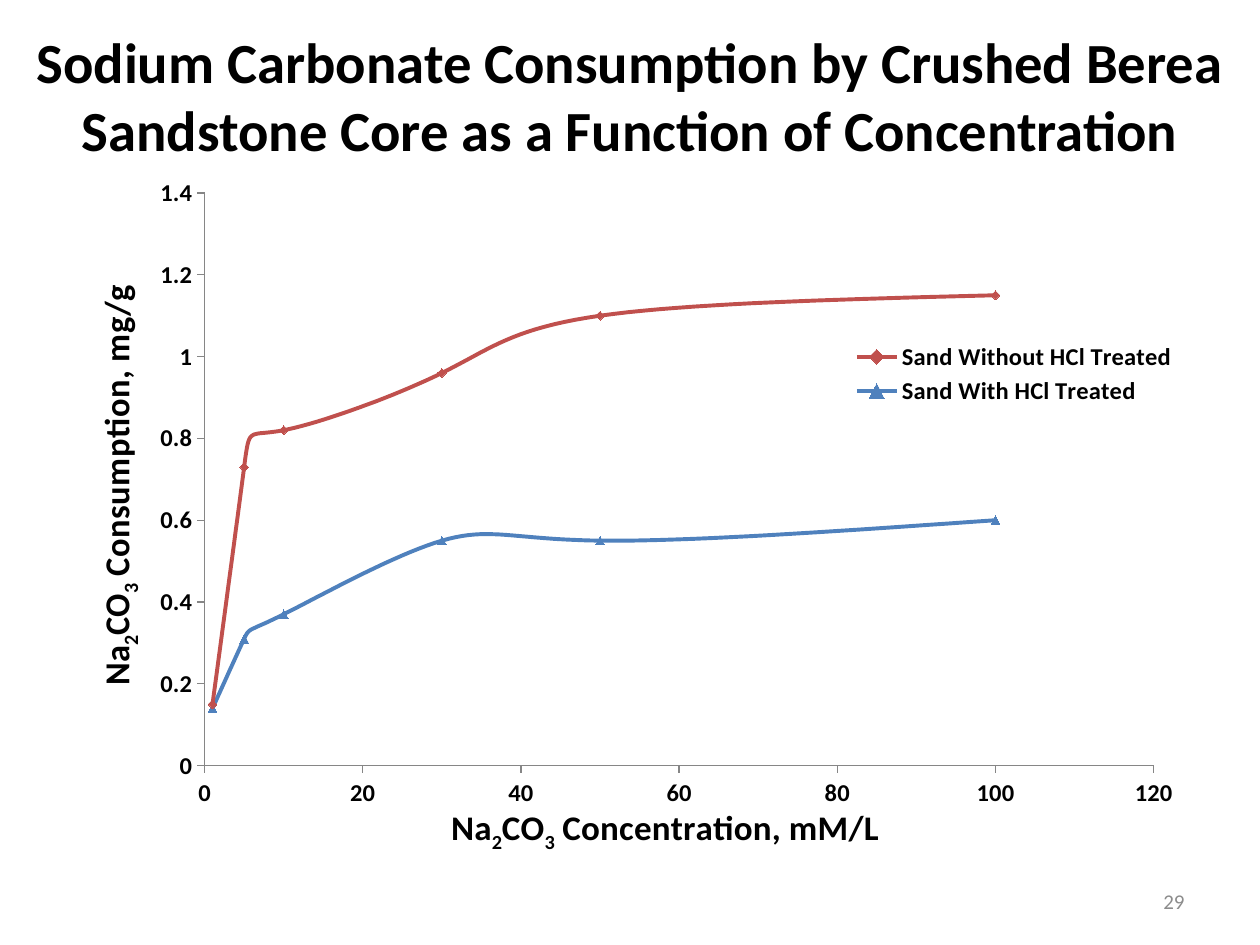
from dataclasses import dataclass

from lxml import etree
from pptx import Presentation
from pptx.chart.data import XyChartData
from pptx.dml.color import RGBColor
from pptx.enum.chart import XL_CHART_TYPE, XL_LEGEND_POSITION, XL_MARKER_STYLE, XL_TICK_MARK
from pptx.enum.text import MSO_ANCHOR, MSO_AUTO_SIZE, PP_ALIGN
from pptx.oxml.ns import qn
from pptx.util import Inches, Pt

SMOOTH = XL_CHART_TYPE.XY_SCATTER_SMOOTH
RIGHT_SIDE = XL_LEGEND_POSITION.RIGHT
DIAMOND, TRIANGLE = XL_MARKER_STYLE.DIAMOND, XL_MARKER_STYLE.TRIANGLE
OUTSIDE, NO_TICK = XL_TICK_MARK.OUTSIDE, XL_TICK_MARK.NONE
MIDDLE, NO_FIT = MSO_ANCHOR.MIDDLE, MSO_AUTO_SIZE.NONE
CENTER, RIGHT = PP_ALIGN.CENTER, PP_ALIGN.RIGHT

WIDTH, HEIGHT = Inches(10), Inches(7.5)


@dataclass(frozen=True)
class Theme:
    font: str = "Calibri"
    ink: str = "000000"
    pale: str = "8C8C8C"
    axis: str = "868686"
    red: str = "C0504D"
    blue: str = "4F81BD"
    title: float = 32.4
    label: float = 20
    tick: float = 14
    note: float = 12


THEME = Theme()
DOSES = (1, 5, 10, 30, 50, 100)
SERIES = (
    ("Sand Without HCl Treated", (0.15, 0.73, 0.82, 0.96, 1.1, 1.15), THEME.red, DIAMOND),
    ("Sand With HCl Treated", (0.14, 0.31, 0.37, 0.55, 0.55, 0.6), THEME.blue, TRIANGLE),
)


def share(left, top, width, height):
    """Turn shares of the slide into a box."""
    return (int(left * WIDTH), int(top * HEIGHT), int(width * WIDTH), int(height * HEIGHT))


def style(font, size, color=THEME.ink, bold=False):
    font.name, font.size, font.bold = THEME.font, Pt(size), bold
    font.color.rgb = RGBColor.from_string(color)


def write(frame, text, align=CENTER, **look):
    """Fill a frame; every second part between bars is a subscript."""
    para = frame.paragraphs[0]
    para.alignment = align
    for place, part in enumerate(text.split("|")):
        run = para.add_run()
        run.text = part
        style(run.font, **look)
        if place % 2:
            run.font._element.set("baseline", "-25000")


def set_text(shape, box, text, **look):
    shape.left, shape.top, shape.width, shape.height = box
    frame = shape.text_frame
    frame.word_wrap, frame.auto_size = True, NO_FIT
    frame.vertical_anchor = MIDDLE
    write(frame, text, **look)


def arrange(node, inner=False, **spots):
    """Give a chart part a manual layout in shares of the chart."""
    layout = node.find(qn("c:layout"))
    if layout is None:
        layout = etree.Element(qn("c:layout"))
        overlay = node.find(qn("c:overlay"))
        if overlay is None:
            node.insert(0, layout)
        else:
            overlay.addprevious(layout)
    manual = etree.SubElement(layout, qn("c:manualLayout"))
    items = {"layoutTarget": "inner"} if inner else {}
    items.update(xMode="edge", yMode="edge", **spots)
    for name, value in items.items():
        etree.SubElement(manual, qn("c:" + name)).set("val", str(value))


def set_axis(axis, text, top, step, spot, turn=0):
    axis.minimum_scale, axis.maximum_scale, axis.major_unit = 0, top, step
    axis.has_major_gridlines = False
    axis.major_tick_mark, axis.minor_tick_mark = OUTSIDE, NO_TICK
    axis.format.line.color.rgb = RGBColor.from_string(THEME.axis)
    axis.format.line.width = Pt(0.75)
    axis.tick_labels.number_format = "General"
    axis.tick_labels.number_format_is_linked = False
    style(axis.tick_labels.font, THEME.tick, bold=True)
    title = axis.axis_title
    write(title.text_frame, text, size=THEME.label, bold=True)
    body = title._element.find(".//" + qn("a:bodyPr"))
    body.set("rot", str(turn * 60000))
    body.set("vert", "horz")
    arrange(title._element, x=spot[0], y=spot[1])


def set_series(line, color, mark, order):
    rgb = RGBColor.from_string(color)
    line.format.line.color.rgb = rgb
    line.format.line.width = Pt(2.25)
    line.marker.style, line.marker.size = mark, 5
    line.marker.format.fill.solid()
    line.marker.format.fill.fore_color.rgb = rgb
    line.marker.format.line.color.rgb = rgb
    node = line._element
    node.find(qn("c:order")).set("val", str(order))
    curve = node.find(qn("c:smooth"))
    if curve is None:
        curve = etree.SubElement(node, qn("c:smooth"))
    curve.set("val", "1")


def add_plot(slide, box):
    data = XyChartData()
    for name, values, _, _ in SERIES:
        series = data.add_series(name)
        for dose, value in zip(DOSES, values):
            series.add_data_point(dose, value)
    chart = slide.shapes.add_chart(SMOOTH, *box, data).chart
    chart.has_title = False
    style(chart.font, 10)
    plot = chart.plots[0]
    plot.vary_by_categories = False
    last = len(SERIES) - 1
    for place, (line, (_, _, color, mark)) in enumerate(zip(list(plot.series), SERIES)):
        set_series(line, color, mark, last - place)
    set_axis(chart.category_axis, "Na|2|CO|3| Concentration, mM/L", 120, 20, (0.32, 0.93))
    set_axis(chart.value_axis, "Na|2|CO|3| Consumption, mg/g", 1.4, 0.2, (0.004, 0.185), -90)
    area = chart._chartSpace.find(".//" + qn("c:plotArea"))
    arrange(area, inner=True, x=0.106, y=0.051, w=0.837, h=0.828)
    chart.has_legend = True
    legend = chart.legend
    legend.position, legend.include_in_layout = RIGHT_SIDE, False
    style(legend.font, THEME.tick, bold=True)
    arrange(legend._element, x=0.675, y=0.26, w=0.29, h=0.105)


def main():
    deck = Presentation()
    deck.slide_width, deck.slide_height = WIDTH, HEIGHT
    slide = deck.slides.add_slide(deck.slide_layouts[5])
    set_text(slide.shapes.title, share(0, 0.045, 1, 0.11),
             "Sodium Carbonate Consumption by Crushed Berea "
             "Sandstone Core as a Function of Concentration",
             size=THEME.title, bold=True)
    page = share(0.717, 0.927, 0.233, 0.053)
    set_text(slide.shapes.add_textbox(*page), page, "29",
             align=RIGHT, size=THEME.note, color=THEME.pale)
    add_plot(slide, share(0.067, 0.167, 0.9, 0.744))
    deck.save("out.pptx")


if __name__ == "__main__":
    main()
